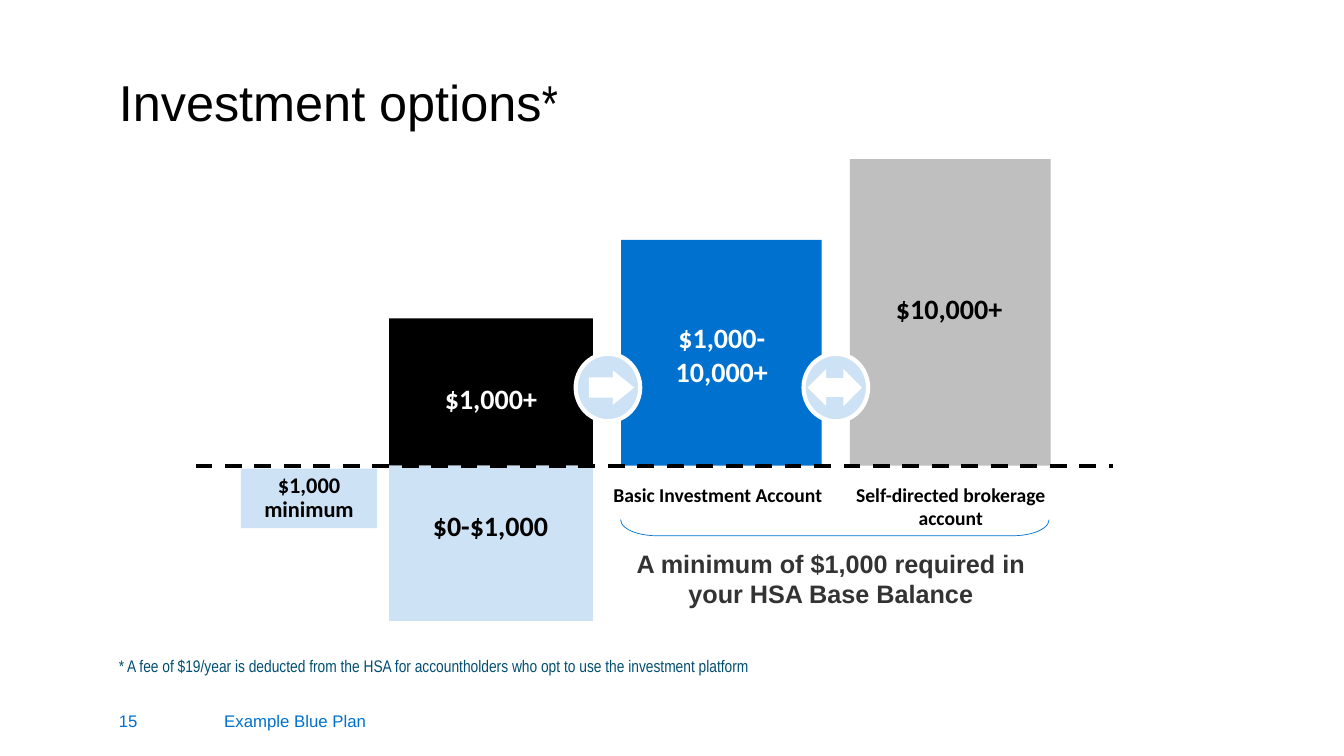
from dataclasses import dataclass

import pptx
import pptx.dml.color
import pptx.enum.dml
import pptx.enum.shapes
import pptx.enum.text
import pptx.oxml
import pptx.oxml.ns
import pptx.util

Inches = pptx.util.Inches
Pt = pptx.util.Pt
Shapes = pptx.enum.shapes.MSO_SHAPE
Align = pptx.enum.text.PP_ALIGN
Anchor = pptx.enum.text.MSO_ANCHOR

BLACK, WHITE, BLUE, PALE_BLUE, GRAY = "000000", "FFFFFF", "0071CE", "CEE2F5", "BFBFBF"
BASELINE = 4.62
CIRCLE_TOP, CIRCLE_WIDTH, CIRCLE_HEIGHT = 3.51, 0.64, 0.67


@dataclass
class Block:
    left: float
    top: float
    width: float
    height: float
    fill: str


@dataclass
class Label:
    text: str
    left: float
    top: float
    width: float
    height: float
    size: float = 20
    color: str = BLACK
    font: str = "Calibri"


@dataclass
class Arrow:
    kind: int
    left: float
    width: float
    height: float
    shaft: float
    head: float


BLOCKS = [
    Block(3.86, 3.16, 2.02, BASELINE - 3.16, BLACK),
    Block(3.86, BASELINE, 2.02, 1.54, PALE_BLUE),
    Block(6.16, 2.38, 1.99, BASELINE - 2.38, BLUE),
    Block(8.43, 1.58, 1.99, BASELINE - 1.58, GRAY),
]

LABELS = [
    Label("$1,000+", 3.73, 3.74, 2.28, 0.44, color=WHITE),
    Label("$0-$1,000", 3.87, 5, 1.99, 0.44),
    Label("$1,000-10,000+", 6.39, 3.13, 1.54, 0.77, color=WHITE),
    Label("$10,000+", 8.55, 2.84, 1.73, 0.44),
    Label("Basic Investment Account", 5.98, 4.74, 2.28, 0.34, size=14),
    Label("Self-directed brokerage account", 8.29, 4.74, 2.28, 0.57, size=14),
    Label("A minimum of $1,000 required in your HSA Base Balance",
          6.1, 5.39, 4.28, 0.71, size=18, color="323332", font="Arial"),
]

CIRCLE_LEFTS = [5.71, 7.97]

ARROWS = [
    Arrow(Shapes.RIGHT_ARROW, 5.84, 0.45, 0.34, 0.59, 0.62),
    Arrow(Shapes.LEFT_ARROW, 8.01, 0.37, 0.37, 0.5, 0.5),
    Arrow(Shapes.RIGHT_ARROW, 8.18, 0.37, 0.37, 0.5, 0.5),
]


def rgb(color: str) -> pptx.dml.color.RGBColor:
    return pptx.dml.color.RGBColor.from_string(color)


def add_shape(slide, kind, left: float, top: float, width: float, height: float,
              fill: str | None = None, line: str | None = None, line_width: float = 0):
    shape = slide.shapes.add_shape(kind, Inches(left), Inches(top), Inches(width), Inches(height))
    shape.shadow.inherit = False
    if fill:
        shape.fill.solid()
        shape.fill.fore_color.rgb = rgb(fill)
    else:
        shape.fill.background()
    if line:
        shape.line.color.rgb = rgb(line)
        shape.line.width = Pt(line_width)
    else:
        shape.line.fill.background()
    return shape


def add_textbox(slide, left: float, top: float, width: float, height: float):
    return slide.shapes.add_textbox(Inches(left), Inches(top), Inches(width), Inches(height))


def format_run(run, size: float, color: str, font: str, bold: bool) -> None:
    run.font.size = Pt(size)
    run.font.name = font
    run.font.bold = bold
    run.font.color.rgb = rgb(color)


def write(shape, text: str, *, size: float, color: str = BLACK, font: str = "Arial",
          bold: bool = False, align=Align.LEFT, anchor=Anchor.TOP, line_spacing: float = 1.0):
    frame = shape.text_frame
    frame.word_wrap = True
    frame.vertical_anchor = anchor
    paragraph = frame.paragraphs[0]
    paragraph.text = text
    paragraph.alignment = align
    paragraph.line_spacing = line_spacing
    for run in paragraph.runs:
        format_run(run, size, color, font, bold)
    return paragraph


def add_baseline(slide) -> None:
    line = slide.shapes.add_connector(
        pptx.enum.shapes.MSO_CONNECTOR.STRAIGHT,
        Inches(1.94), Inches(BASELINE), Inches(11.04), Inches(BASELINE))
    line.line.color.rgb = rgb(BLACK)
    line.line.width = Pt(3)
    line.line.dash_style = pptx.enum.dml.MSO_LINE.DASH
    properties = line._element.spPr
    properties.append(pptx.oxml.parse_xml(
        "<a:effectLst %s/>" % pptx.oxml.ns.nsdecls("a")))


def main() -> None:
    presentation = pptx.Presentation()
    presentation.slide_width = Inches(13.33)
    presentation.slide_height = Inches(7.5)
    slide = presentation.slides.add_slide(presentation.slide_layouts[6])

    # Title and footer
    title = write(add_textbox(slide, 1.08, 0.79, 12.05, 0.5), "Investment options",
                  size=36, anchor=Anchor.MIDDLE, line_spacing=0.9)
    asterisk = title.add_run()
    asterisk.text = "*"
    format_run(asterisk, 36, BLACK, "Arial Narrow", False)
    write(add_textbox(slide, 2.08, 7, 1.65, 0.3), "Example Blue Plan",
          size=12, color=BLUE, align=Align.RIGHT)
    write(add_textbox(slide, 1.08, 6.95, 1, 0.4), "15",
          size=12, color=BLUE, anchor=Anchor.MIDDLE)

    # Account blocks and the dashed minimum line
    for block in BLOCKS:
        add_shape(slide, Shapes.RECTANGLE, block.left, block.top, block.width,
                  block.height, fill=block.fill)
    add_baseline(slide)
    minimum = add_shape(slide, Shapes.RECTANGLE, 2.39, 4.65, 1.35, 0.59, fill=PALE_BLUE)
    write(minimum, "$1,000\vminimum", size=16, font="Calibri", bold=True,
          align=Align.CENTER, line_spacing=0.9)

    # Transfer arrows between the blocks
    for left in CIRCLE_LEFTS:
        add_shape(slide, Shapes.OVAL, left, CIRCLE_TOP, CIRCLE_WIDTH, CIRCLE_HEIGHT,
                  fill=PALE_BLUE, line=WHITE, line_width=3)
    for arrow in ARROWS:
        top = CIRCLE_TOP + (CIRCLE_HEIGHT - arrow.height) / 2
        shape = add_shape(slide, arrow.kind, arrow.left, top, arrow.width,
                          arrow.height, fill=WHITE)
        shape.adjustments[0] = arrow.shaft
        shape.adjustments[1] = arrow.head

    # Bracket under the two investment accounts
    bracket = add_shape(slide, Shapes.LEFT_BRACKET, 8.2, 3.11, 0.16, 4.25,
                        line=BLUE, line_width=0.5)
    bracket.rotation = 270
    bracket.adjustments[0] = 2.26

    # Labels and footnote
    for label in LABELS:
        box = add_textbox(slide, label.left, label.top, label.width, label.height)
        write(box, label.text, size=label.size, color=label.color, font=label.font,
              bold=True, align=Align.CENTER)
    write(add_textbox(slide, 1.08, 6.44, 11.27, 0.27),
          "* A fee of $19/year is deducted from the HSA for accountholders "
          "who opt to use the investment platform",
          size=12, color="004E71", font="Arial Narrow", line_spacing=1.07)

    presentation.save("out.pptx")


if __name__ == "__main__":
    main()
